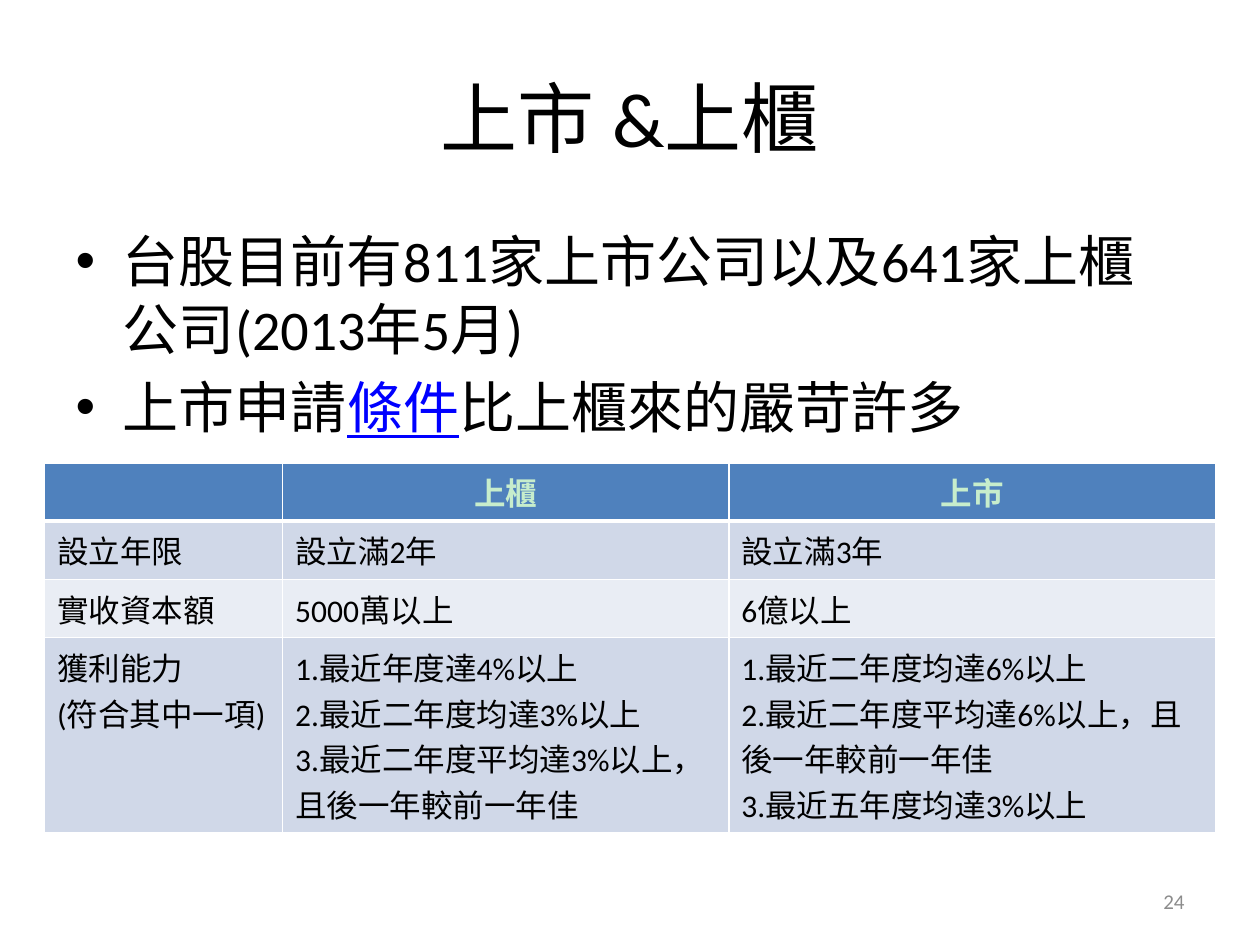
from dataclasses import dataclass

import lxml.etree
import pptx
import pptx.dml.color
import pptx.enum.text
import pptx.oxml.ns
import pptx.util

FONT = "Calibri"
WHITE = "FFFFFF"
BLACK = "000000"
LINK_BLUE = "0000FF"
HEADER_FILL = "4F81BD"
HEADER_TEXT = "C7EDCC"
BAND_FILLS = ("D0D8E8", "E9EDF4")
COLUMN_WIDTHS = (136, 255, 278)
ROW_HEIGHT = 29.5
ALIGN = pptx.enum.text.PP_ALIGN


@dataclass(frozen=True)
class Box:
    left: float
    top: float
    width: float
    height: float

    def lengths(self) -> list:
        return [pptx.util.Pt(value) for value in (self.left, self.top, self.width, self.height)]


@dataclass(frozen=True)
class Row:
    cells: tuple[tuple[str, ...], ...]
    fill: str
    color: str = BLACK
    bold: bool = False
    align: ALIGN = ALIGN.LEFT
    top_line: float = 1
    bottom_line: float = 1


def rgb(color: str) -> pptx.dml.color.RGBColor:
    return pptx.dml.color.RGBColor.from_string(color)


def add_text(paragraph, text: str, *, size: float, color: str = BLACK, bold: bool = False,
             underline: bool = False, align=None) -> None:
    if align is not None:
        paragraph.alignment = align
    run = paragraph.add_run()
    run.text = text
    run.font.name = FONT
    run.font.size = pptx.util.Pt(size)
    run.font.bold = bold
    run.font.underline = underline
    run.font.color.rgb = rgb(color)


def place(shape, box: Box) -> None:
    shape.left, shape.top, shape.width, shape.height = box.lengths()


def next_paragraph(text_frame, index: int):
    return text_frame.add_paragraph() if index else text_frame.paragraphs[0]


def set_borders(cell, color: str, widths: dict[str, float]) -> None:
    qualified = pptx.oxml.ns.qn
    properties = cell._tc.get_or_add_tcPr()
    for position, (side, width) in enumerate(widths.items()):
        line = lxml.etree.Element(qualified(f"a:ln{side}"), w=str(pptx.util.Pt(width)))
        fill = lxml.etree.SubElement(line, qualified("a:solidFill"))
        lxml.etree.SubElement(fill, qualified("a:srgbClr"), val=color)
        properties.insert(position, line)


def fill_row(table, row_index: int, row: Row) -> None:
    table.rows[row_index].height = pptx.util.Pt(ROW_HEIGHT)
    for column_index, lines in enumerate(row.cells):
        cell = table.cell(row_index, column_index)
        cell.fill.solid()
        cell.fill.fore_color.rgb = rgb(row.fill)
        set_borders(cell, WHITE, {"L": 1, "R": 1, "T": row.top_line, "B": row.bottom_line})
        for index, text in enumerate(lines):
            add_text(next_paragraph(cell.text_frame, index), text, size=18,
                     color=row.color, bold=row.bold, align=row.align)


def add_requirements_table(slide, box: Box, rows: list[Row]) -> None:
    table = slide.shapes.add_table(len(rows), len(COLUMN_WIDTHS), *box.lengths()).table
    for column, width in zip(table.columns, COLUMN_WIDTHS):
        column.width = pptx.util.Pt(width)
    for row_index, row in enumerate(rows):
        fill_row(table, row_index, row)


def add_page_number(slide, box: Box, number: str) -> None:
    text_frame = slide.shapes.add_textbox(*box.lengths()).text_frame
    text_frame.word_wrap = True
    text_frame.vertical_anchor = pptx.enum.text.MSO_ANCHOR.MIDDLE
    add_text(text_frame.paragraphs[0], number, size=12, color="8C8C8C", align=ALIGN.RIGHT)


REQUIREMENTS = [
    Row(((), ("上櫃",), ("上市",)), HEADER_FILL, HEADER_TEXT, True, ALIGN.CENTER, bottom_line=3),
    Row((("設立年限",), ("設立滿2年",), ("設立滿3年",)), BAND_FILLS[0], top_line=3),
    Row((("實收資本額",), ("5000萬以上",), ("6億以上",)), BAND_FILLS[1]),
    Row((
        ("獲利能力", "(符合其中一項)"),
        ("1.最近年度達4%以上", "2.最近二年度均達3%以上",
         "3.最近二年度平均達3%以上，且後一年較前一年佳"),
        ("1.最近二年度均達6%以上", "2.最近二年度平均達6%以上，且後一年較前一年佳",
         "3.最近五年度均達3%以上"),
    ), BAND_FILLS[0]),
]

BULLETS = [
    [("台股目前有811家上市公司以及641家上櫃公司(2013年5月)", {})],
    [("上市申請", {}), ("條件", {"color": LINK_BLUE, "underline": True}),
     ("比上櫃來的嚴苛許多", {})],
]


def main() -> None:
    presentation = pptx.Presentation()
    presentation.slide_width = pptx.util.Pt(720)
    presentation.slide_height = pptx.util.Pt(540)
    slide = presentation.slides.add_slide(presentation.slide_layouts[1])
    slide.background.fill.solid()
    slide.background.fill.fore_color.rgb = rgb(WHITE)

    title = slide.shapes.title
    place(title, Box(36, 21.6, 648, 90))
    add_text(title.text_frame.paragraphs[0], "上市 &上櫃", size=44, align=ALIGN.CENTER)

    body = slide.placeholders[1]
    place(body, Box(36, 126, 648, 356.4))
    for index, runs in enumerate(BULLETS):
        paragraph = next_paragraph(body.text_frame, index)
        for text, text_format in runs:
            add_text(paragraph, text, size=32, **text_format)

    table_box = Box(25.5, 264.5, sum(COLUMN_WIDTHS), ROW_HEIGHT * len(REQUIREMENTS))
    add_requirements_table(slide, table_box, REQUIREMENTS)
    add_page_number(slide, Box(516, 500.5, 168, 28.75), "24")
    presentation.save("out.pptx")


if __name__ == "__main__":
    main()
